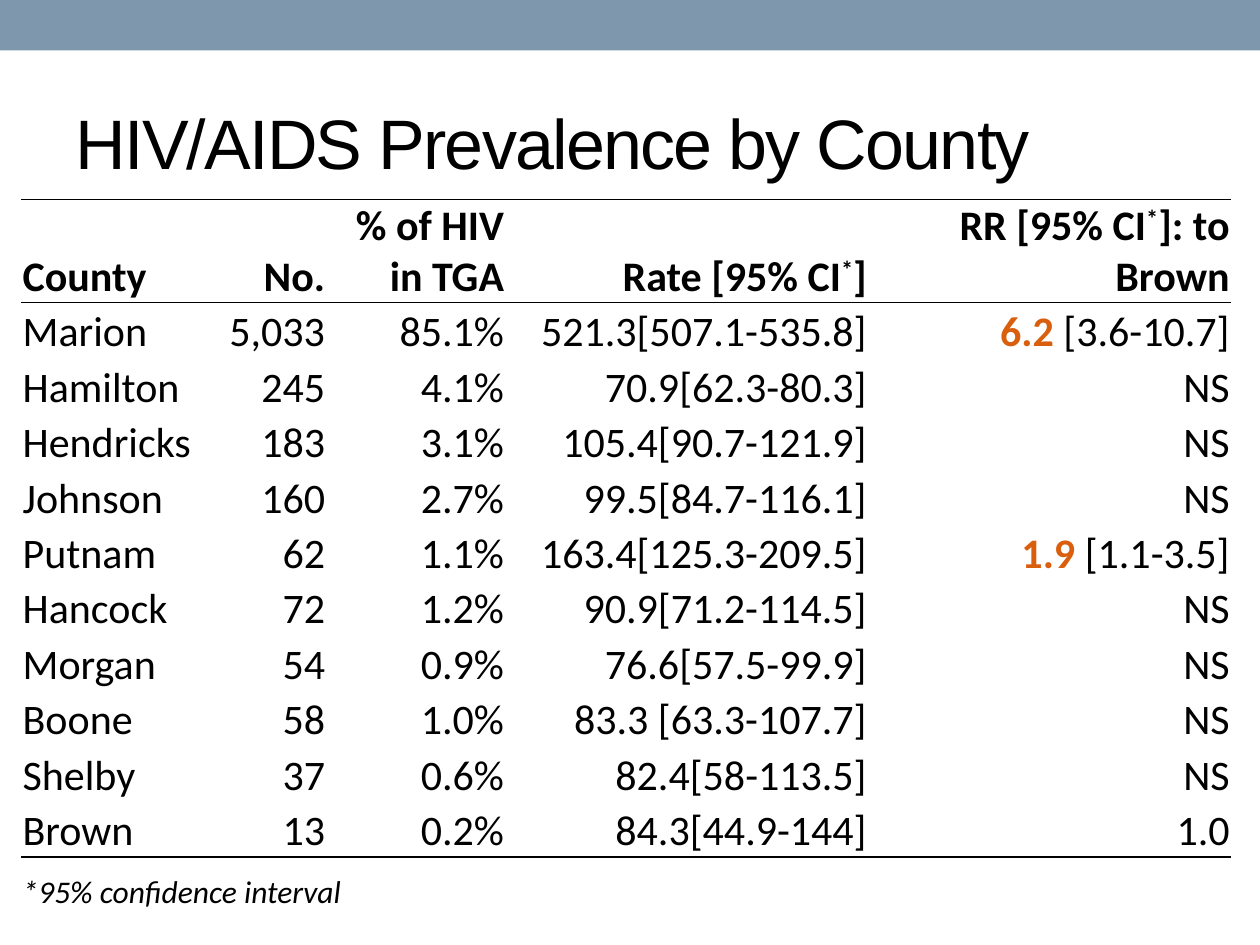
import pptx
import pptx.util
from lxml import etree
from pptx.dml.color import RGBColor
from pptx.enum.shapes import MSO_SHAPE
from pptx.enum.text import MSO_ANCHOR, MSO_AUTO_SIZE, PP_ALIGN
from pptx.oxml.ns import qn
from pptx.util import Inches

BLACK = RGBColor(0x00, 0x00, 0x00)
BAND_BLUE = RGBColor(0x7E, 0x97, 0xAD)
ORANGE = RGBColor(0xD9, 0x5F, 0x0E)

# Content: a cell is a string, or a list of (text, style) runs
TITLE = "HIV/AIDS Prevalence by County"
HEADER = [
    "County",
    "No.",
    "% of HIV\nin TGA",
    [("Rate [95% CI", ""), ("*", "super"), ("]", "")],
    [("RR [95% CI", ""), ("*", "super"), ("]: to Brown", "")],
]
COUNTIES = [
    ["Marion", "5,033", "85.1%", "521.3[507.1-535.8]", [("6.2", "key"), (" [3.6-10.7]", "")]],
    ["Hamilton", "245", "4.1%", "70.9[62.3-80.3]", "NS"],
    ["Hendricks", "183", "3.1%", "105.4[90.7-121.9]", "NS"],
    ["Johnson", "160", "2.7%", "99.5[84.7-116.1]", "NS"],
    ["Putnam", "62", "1.1%", "163.4[125.3-209.5]", [("1.9 ", "key"), ("[1.1-3.5]", "")]],
    ["Hancock", "72", "1.2%", "90.9[71.2-114.5]", "NS"],
    ["Morgan", "54", "0.9%", "76.6[57.5-99.9]", "NS"],
    ["Boone", "58", "1.0%", "83.3 [63.3-107.7]", "NS"],
    ["Shelby", "37", "0.6%", "82.4[58-113.5]", "NS"],
    ["Brown", "13", "0.2%", "84.3[44.9-144]", "1.0"],
]
FOOTNOTE = ["*95% confidence interval", "", "", "", ""]
ROWS = [HEADER, *COUNTIES, FOOTNOTE]
LAST = len(ROWS) - 1

COLUMN_WIDTHS = [1.5, 0.92, 1.42, 2.88, 2.88]
HEADER_HEIGHT, ROW_HEIGHT = 0.78, 0.44
# Rule weight in points, by the row it sits above
RULES = {0: 0.5, 1: 0.5, LAST: 1}


def set_borders(cell, row):
    """Draw the horizontal rules and switch off every other border."""
    properties = cell._tc.get_or_add_tcPr()
    weights = {"lnL": None, "lnR": None, "lnT": RULES.get(row), "lnB": RULES.get(row + 1)}
    for side, weight in weights.items():
        line = etree.SubElement(properties, qn("a:" + side))
        if weight is None:
            line.set("w", "0")
            etree.SubElement(line, qn("a:noFill"))
        else:
            line.set("w", str(pptx.util.Pt(weight)))
            fill = etree.SubElement(line, qn("a:solidFill"))
            etree.SubElement(fill, qn("a:srgbClr"), val=str(BLACK))


def add_run(paragraph, text, style, row):
    run = paragraph.add_run()
    run.text = text
    font = run.font
    font.name = "Calibri"
    font.size = pptx.util.Pt(18 if row == LAST else 24)
    font.bold = row == 0 or style == "key"
    font.italic = row == LAST
    font.color.rgb = ORANGE if style == "key" else BLACK
    if style == "super":
        font._element.set("baseline", "30000")


def fill_cell(cell, content, row, column):
    set_borders(cell, row)
    cell.fill.background()
    cell.vertical_anchor = MSO_ANCHOR.BOTTOM
    cell.margin_left = cell.margin_right = cell.margin_top = Inches(0.01)
    cell.margin_bottom = 0
    paragraph = cell.text_frame.paragraphs[0]
    paragraph.alignment = PP_ALIGN.RIGHT if column else PP_ALIGN.LEFT
    if not content:
        return
    runs = [(content, "")] if isinstance(content, str) else content
    for text, style in runs:
        for number, part in enumerate(text.split("\n")):
            if number:
                paragraph.add_line_break()
            add_run(paragraph, part, style, row)


presentation = pptx.Presentation()
presentation.slide_width = Inches(10)
presentation.slide_height = Inches(7.5)
slide = presentation.slides.add_slide(presentation.slide_layouts[5])

# Top band
band = slide.shapes.add_shape(MSO_SHAPE.RECTANGLE, 0, 0, Inches(10), Inches(0.4))
band.shadow.inherit = False
band.fill.solid()
band.fill.fore_color.rgb = BAND_BLUE
band.line.fill.background()

# Title
title = slide.shapes.title
title.left, title.top = Inches(0.5), Inches(0.58)
title.width, title.height = Inches(9), Inches(1.08)
title.text_frame.auto_size = MSO_AUTO_SIZE.NONE
title.text_frame.vertical_anchor = MSO_ANCHOR.MIDDLE
heading = title.text_frame.paragraphs[0]
heading.alignment = PP_ALIGN.LEFT
heading_run = heading.add_run()
heading_run.text = TITLE
heading_run.font.name = "Arial"
heading_run.font.size = pptx.util.Pt(40)
heading_run.font.color.rgb = BLACK
heading_run.font._element.set("spc", "-100")

# Prevalence table
prevalence = slide.shapes.add_table(
    len(ROWS), len(COLUMN_WIDTHS), Inches(0.17), Inches(1.58),
    Inches(sum(COLUMN_WIDTHS)), Inches(HEADER_HEIGHT + ROW_HEIGHT * LAST),
).table
prevalence.first_row = prevalence.horz_banding = False
for column, width in enumerate(COLUMN_WIDTHS):
    prevalence.columns[column].width = Inches(width)
for row, contents in enumerate(ROWS):
    prevalence.rows[row].height = Inches(ROW_HEIGHT if row else HEADER_HEIGHT)
    for column, content in enumerate(contents):
        fill_cell(prevalence.cell(row, column), content, row, column)
prevalence.cell(LAST, 0).merge(prevalence.cell(LAST, len(COLUMN_WIDTHS) - 1))

presentation.save("out.pptx")
